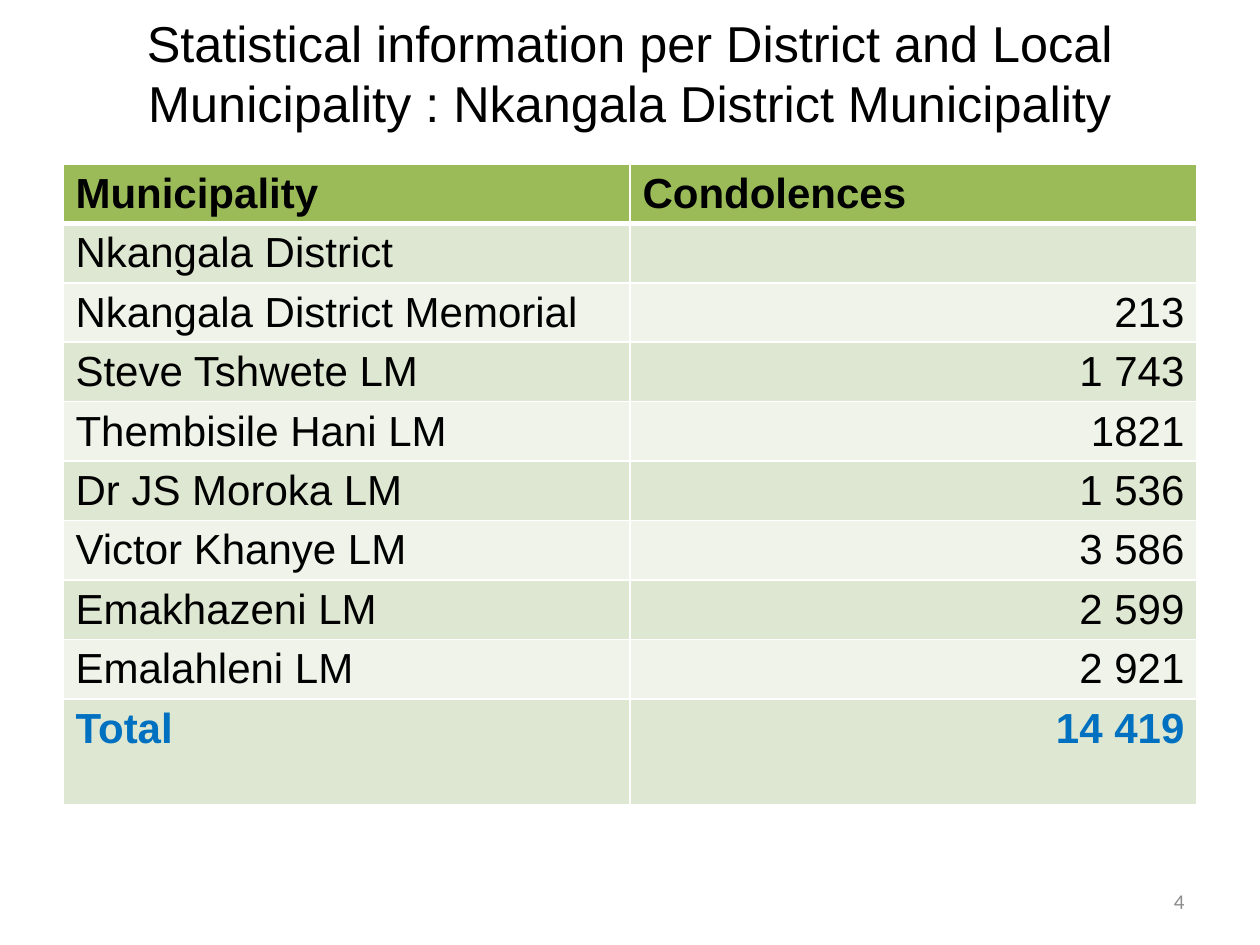
"""Build the Nkangala District statistics slide."""
import pptx
import pptx.util
import pptx.dml.color
import pptx.enum.text
import pptx.oxml.ns
import lxml.etree

TITLE = ("Statistical information per District and Local "
         "Municipality : Nkangala District Municipality")
ROWS = [
    ("Municipality", "Condolences"),
    ("Nkangala District", ""),
    ("Nkangala District Memorial", "213"),
    ("Steve Tshwete LM", "1 743"),
    ("Thembisile Hani LM", "1821"),
    ("Dr JS Moroka LM", "1 536"),
    ("Victor Khanye LM", "3 586"),
    ("Emakhazeni LM", "2 599"),
    ("Emalahleni LM", "2 921"),
    ("Total", "14 419"),
]
PAGE = "4"
WIDE, HIGH = 10, 7.5
EDGE = WIDE * 0.05
SPAN = WIDE - 2 * EDGE
TOP, ROW, LAST = 1.3, 0.47, 0.84
HEAD, BANDS = "9BBB59", ("EFF3EA", "DEE7D1")
BLACK, BLUE, GREY, WHITE = "000000", "0070C0", "8C8C8C", "FFFFFF"
ALIGN = pptx.enum.text.PP_ALIGN
MIDDLE = pptx.enum.text.MSO_ANCHOR.MIDDLE
inch = pptx.util.Inches


def color(code):
    return pptx.dml.color.RGBColor.from_string(code)


def write(frame, text, size, tint=BLACK, align=ALIGN.LEFT, bold=False, face="Arial"):
    frame.text = text
    para = frame.paragraphs[0]
    para.alignment = align
    for font in [para.font] + [run.font for run in para.runs]:
        font.size = pptx.util.Pt(size)
        font.name = face
        font.bold = bold
        font.color.rgb = color(tint)


def border(cell, sides):
    props = cell._tc.get_or_add_tcPr()
    name = pptx.oxml.ns.qn
    for side, width in sides.items():
        line = lxml.etree.SubElement(props, name("a:ln" + side), w=str(pptx.util.Pt(width)))
        fill = lxml.etree.SubElement(line, name("a:solidFill"))
        lxml.etree.SubElement(fill, name("a:srgbClr"), val=WHITE)


def place(shape, left, top, width, height):
    shape.left, shape.top = inch(left), inch(top)
    shape.width, shape.height = inch(width), inch(height)


def add_title(slide):
    title = slide.shapes.title
    place(title, EDGE, 0, SPAN, 1.15)
    write(title.text_frame, TITLE, 28.8, align=ALIGN.CENTER)
    title.text_frame.vertical_anchor = MIDDLE


def add_grid(slide):
    count, cols = len(ROWS), len(ROWS[0])
    tall = ROW * (count - 1) + LAST
    grid = slide.shapes.add_table(
        count, cols, inch(EDGE), inch(TOP), inch(SPAN), inch(tall)).table
    for r, texts in enumerate(ROWS):
        first, last = r == 0, r == count - 1
        grid.rows[r].height = inch(LAST if last else ROW)
        for c, text in enumerate(texts):
            cell = grid.cell(r, c)
            border(cell, {"L": 1, "R": 1, "T": 3 if r == 1 else 1, "B": 3 if first else 1})
            cell.fill.solid()
            cell.fill.fore_color.rgb = color(HEAD if first else BANDS[r % 2])
            write(cell.text_frame, text, 24, BLUE if last else BLACK,
                  ALIGN.RIGHT if c and not first else ALIGN.LEFT, first or last)


def add_page(slide):
    width = 2.33
    box = slide.shapes.add_textbox(
        inch(WIDE - EDGE - width), inch(6.95), inch(width), inch(0.4))
    box.text_frame.word_wrap = True
    box.text_frame.vertical_anchor = MIDDLE
    write(box.text_frame, PAGE, 12, GREY, ALIGN.RIGHT, face="Calibri")


def main():
    deck = pptx.Presentation()
    deck.slide_width, deck.slide_height = inch(WIDE), inch(HIGH)
    slide = deck.slides.add_slide(deck.slide_layouts[5])
    add_title(slide)
    add_grid(slide)
    add_page(slide)
    deck.save("out.pptx")


if __name__ == "__main__":
    main()
